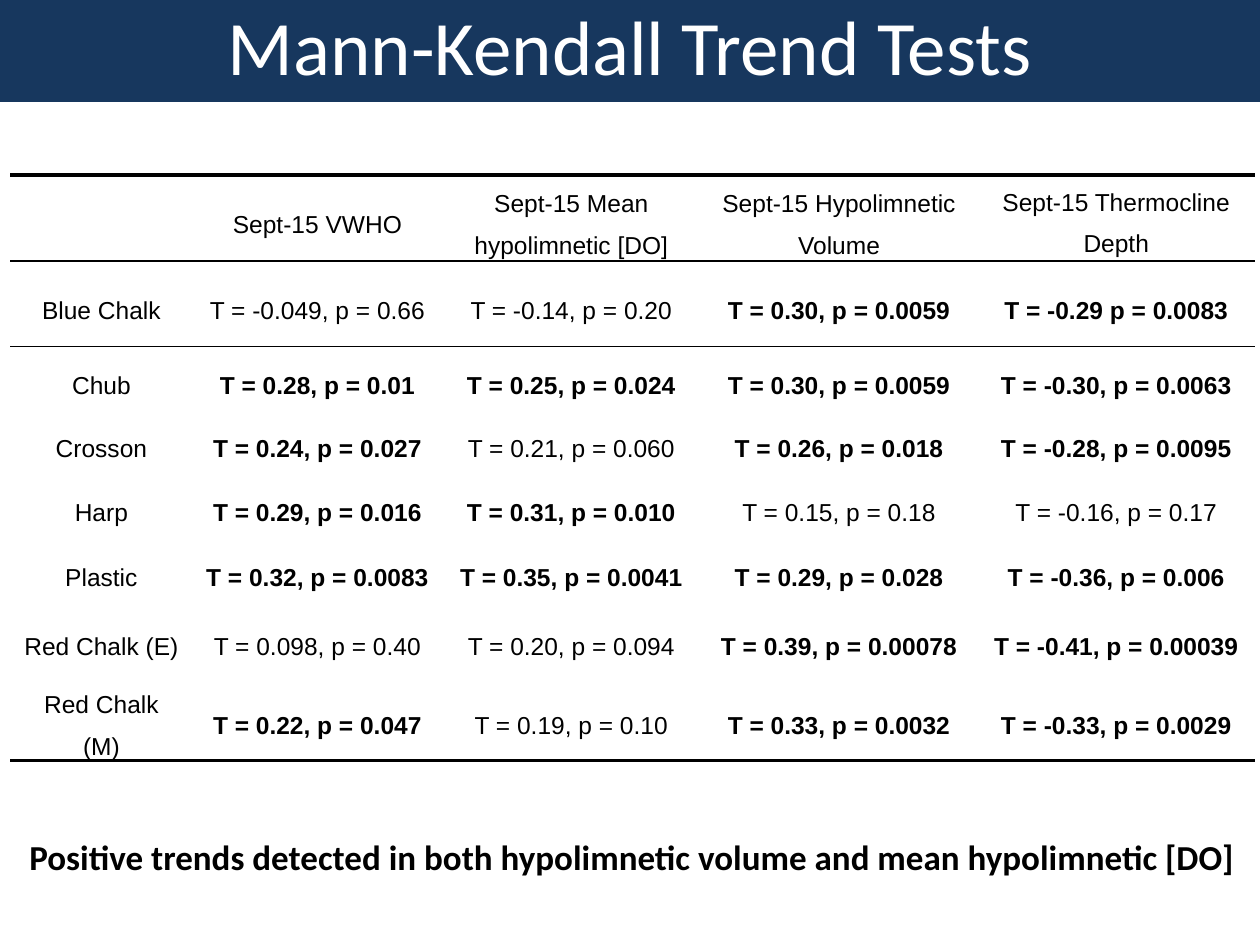
from lxml import etree
from pptx import Presentation
from pptx.dml.color import RGBColor
from pptx.enum import text
from pptx.oxml import ns
from pptx.util import Inches, Pt

NAVY = RGBColor(0x17, 0x37, 0x5E)
WHITE = RGBColor(0xFF, 0xFF, 0xFF)
BLACK = RGBColor(0, 0, 0)
PLAIN = "{2D5ABB26-0587-4C30-8999-92F81FD0307C}"  # table style without grid

HEAD = ["", "Sept-15 VWHO", "Sept-15 Mean hypolimnetic [DO]",
        "Sept-15 Hypolimnetic Volume", "Sept-15 Thermocline Depth"]
LAKES = [
    ["Blue Chalk", "T = -0.049, p = 0.66", "T = -0.14, p = 0.20",
     "T = 0.30, p = 0.0059", "T = -0.29 p = 0.0083"],
    ["Chub", "T = 0.28, p = 0.01", "T = 0.25, p = 0.024",
     "T = 0.30, p = 0.0059", "T = -0.30, p = 0.0063"],
    ["Crosson", "T = 0.24, p = 0.027", "T = 0.21, p = 0.060",
     "T = 0.26, p = 0.018", "T = -0.28, p = 0.0095"],
    ["Harp", "Τ = 0.29, p = 0.016", "T = 0.31, p = 0.010",
     "T = 0.15, p = 0.18", "T = -0.16, p = 0.17"],
    ["Plastic", "T = 0.32, p = 0.0083", "T = 0.35, p = 0.0041",
     "T = 0.29, p = 0.028", "T = -0.36, p = 0.006"],
    ["Red Chalk (E)", "T = 0.098, p = 0.40", "T = 0.20, p = 0.094",
     "T = 0.39, p = 0.00078", "T = -0.41, p = 0.00039"],
    ["Red Chalk (M)", "T = 0.22, p = 0.047", "T = 0.19, p = 0.10",
     "T = 0.33, p = 0.0032", "T = -0.33, p = 0.0029"],
]
ROWS = [HEAD] + LAKES
WIDTHS = [1.45, 1.98, 2.05, 2.2, 2.2]
HEIGHTS = [0.68, 0.68, 0.51, 0.5, 0.51, 0.52, 0.59, 0.63]


def write(par, words, size, font, color, bold=False):
    par.alignment = text.PP_ALIGN.CENTER
    run = par.add_run()
    run.text = words
    run.font.size = Pt(size)
    run.font.name = font
    run.font.bold = bold
    run.font.color.rgb = color


def rule(cell, side, width):
    props = cell._tc.get_or_add_tcPr()
    line = etree.SubElement(props, ns.qn("a:ln" + side), w=str(Pt(width)))
    fill = etree.SubElement(line, ns.qn("a:solidFill"))
    etree.SubElement(fill, ns.qn("a:srgbClr"), val=str(BLACK))


prs = Presentation()
prs.slide_width, prs.slide_height = Inches(10), Inches(7.5)
slide = prs.slides.add_slide(prs.slide_layouts[5])

# Title band
title = slide.shapes.title
title.left, title.top = Inches(0), Inches(0)
title.width, title.height = Inches(10), Inches(0.81)
title.fill.solid()
title.fill.fore_color.rgb = NAVY
frame = title.text_frame
frame.auto_size = text.MSO_AUTO_SIZE.NONE
frame.vertical_anchor = text.MSO_ANCHOR.MIDDLE
frame.paragraphs[0].line_spacing = 0.9
write(frame.paragraphs[0], "Mann-Kendall Trend Tests", 44, "Calibri", WHITE)

# Table of test results
table = slide.shapes.add_table(
    len(ROWS), len(HEAD), Inches(0.08), Inches(1.39),
    Inches(sum(WIDTHS)), Inches(sum(HEIGHTS))).table
table.first_row = table.horz_banding = False
table._tbl.tblPr.find(ns.qn("a:tableStyleId")).text = PLAIN
for col, width in zip(table.columns, WIDTHS):
    col.width = Inches(width)
for row, height in zip(table.rows, HEIGHTS):
    row.height = Inches(height)

last = len(ROWS) - 1
for r, row in enumerate(ROWS):
    for c, words in enumerate(row):
        cell = table.cell(r, c)
        cell.margin_left = cell.margin_right = Inches(0.1)
        cell.margin_top = cell.margin_bottom = Inches(0)
        cell.vertical_anchor = text.MSO_ANCHOR.MIDDLE
        # Thick rules outside, a thin one under the header
        if r < 2:
            rule(cell, "T", 1 if r else 2.25)
        if r in (0, last):
            rule(cell, "B", 2.25 if r else 1)
        cell.fill.background()
        if words:
            # Significant results are bold
            bold = "p = " in words and float(words.split("p = ")[1]) < 0.05
            par = cell.text_frame.paragraphs[0]
            par.line_spacing = 1.5
            write(par, words, 14, "Arial", BLACK, bold)
table.cell(0, 4).vertical_anchor = text.MSO_ANCHOR.TOP

# Conclusion
note = slide.shapes.add_textbox(Inches(0.09), Inches(6.58),
                                Inches(9.85), Inches(0.44))
note.text_frame.word_wrap = False
note.text_frame.auto_size = text.MSO_AUTO_SIZE.SHAPE_TO_FIT_TEXT
write(note.text_frame.paragraphs[0],
      "Positive trends detected in both hypolimnetic volume and mean "
      "hypolimnetic [DO]", 20, "Calibri", BLACK, True)

prs.save("out.pptx")
